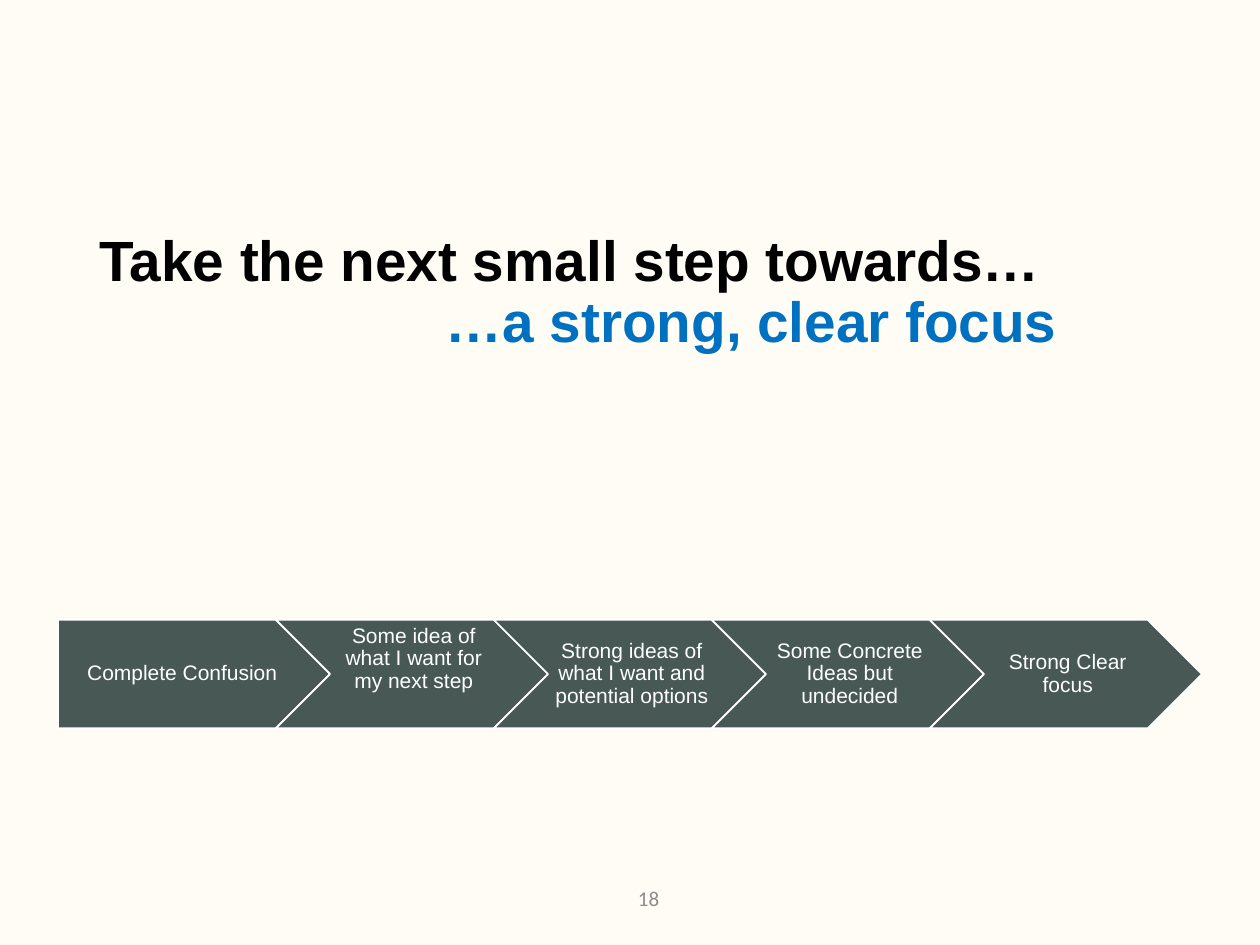
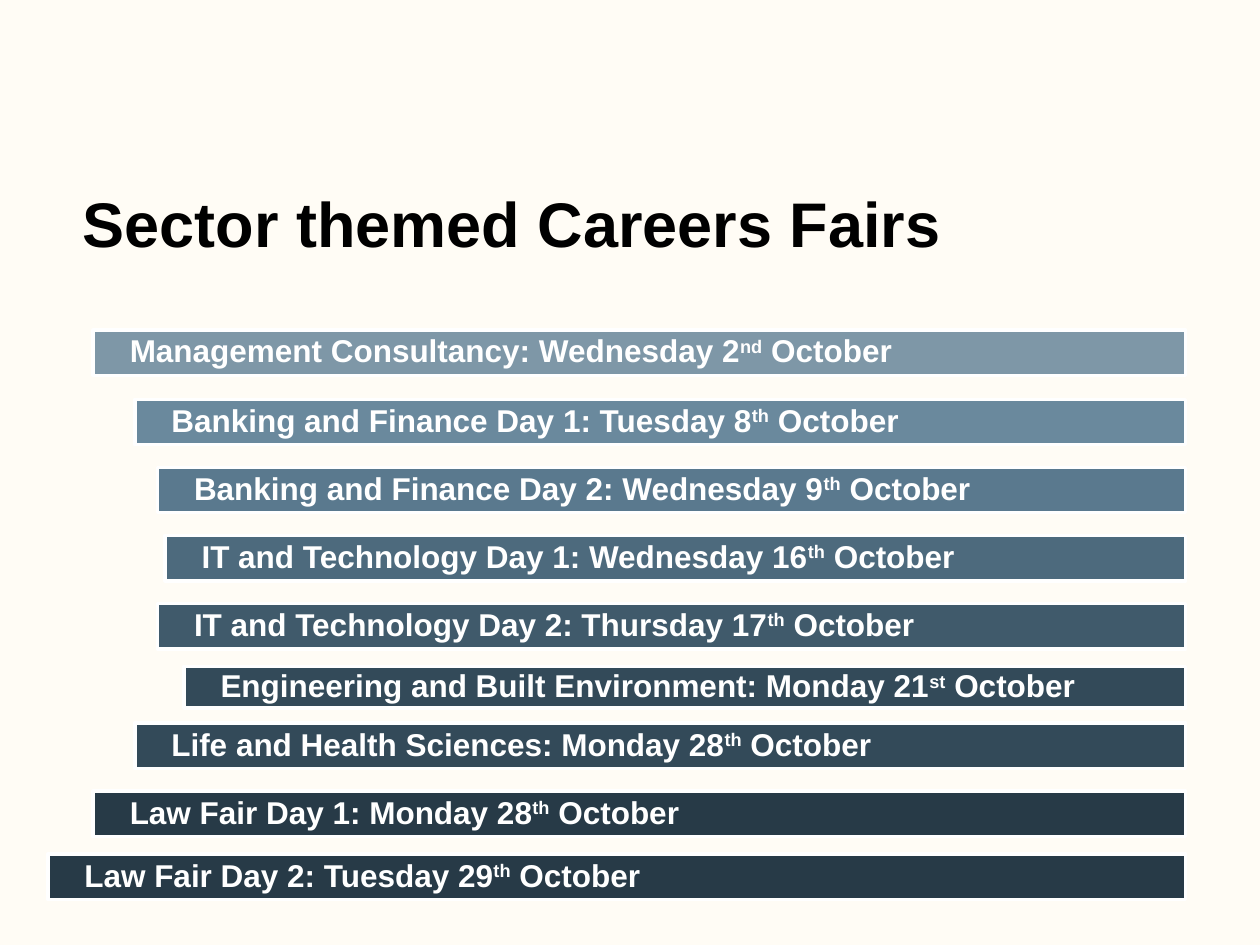
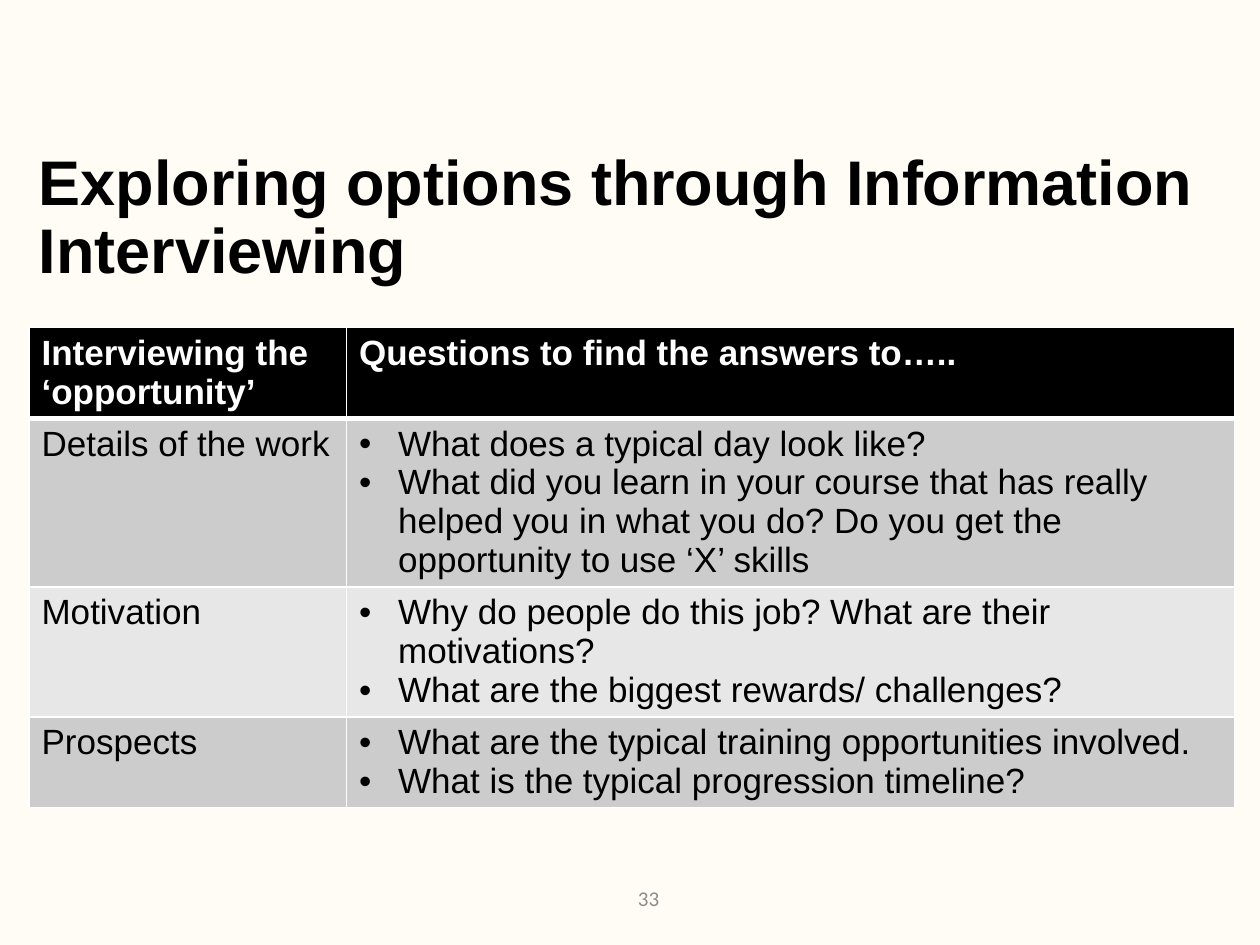
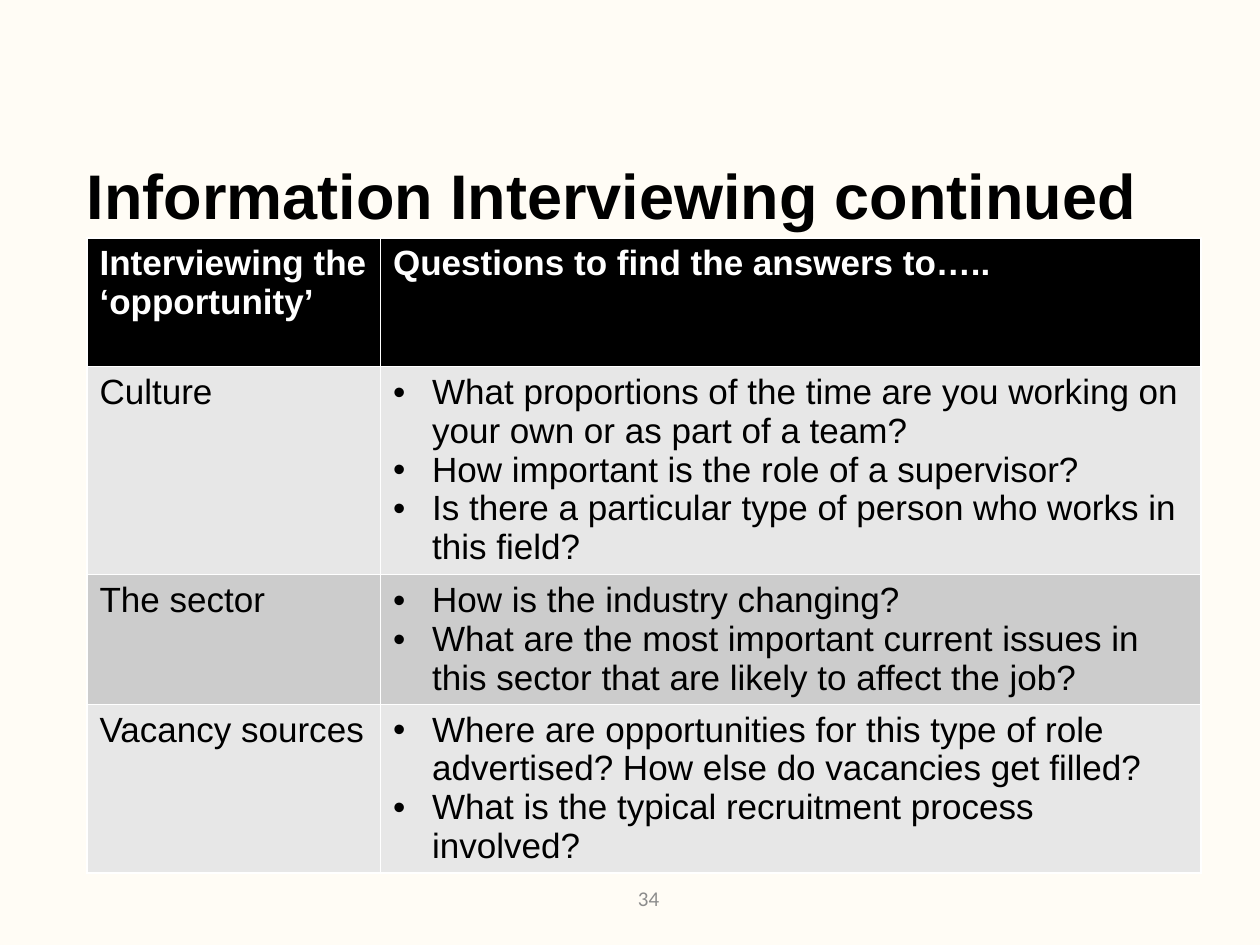
from dataclasses import dataclass

from lxml import etree
from pptx import Presentation
from pptx.dml.color import RGBColor
from pptx.enum import shapes, text
from pptx.oxml import ns
from pptx.util import Inches, Pt


@dataclass(frozen=True)
class Theme:
    font: str = "Arial"
    number_font: str = "Calibri"
    background: str = "FFFCF5"
    ink: str = "000000"
    white: str = "FFFFFF"
    accent: str = "0070C0"
    number: str = "8C8C8C"
    step: str = "475855"
    band_dark: str = "CCCCCC"
    band_light: str = "E7E7E7"
    title_size: float = 36
    focus_size: float = 32.4
    table_size: float = 20
    table_line: float = 22.2
    bar_size: float = 18
    small_size: float = 12


@dataclass(frozen=True)
class Box:
    left: float
    top: float
    width: float
    height: float

    def lengths(self) -> tuple:
        return tuple(Inches(v) for v in (self.left, self.top, self.width, self.height))


@dataclass(frozen=True)
class Style:
    size: float
    color: str
    bold: bool = False
    font: str = "Arial"


@dataclass(frozen=True)
class Step:
    label: str
    anchor: text.MSO_ANCHOR = text.MSO_ANCHOR.MIDDLE


@dataclass(frozen=True)
class Fair:
    name: str
    ordinal: str
    left: float
    top: float
    color: str
    height: float = 0.36


@dataclass(frozen=True)
class Topic:
    name: str
    questions: tuple
    height: float
    color: str


@dataclass(frozen=True)
class QuestionTable:
    left: float
    top: float
    columns: tuple
    header_height: float
    header_rule: float
    topics: tuple


THEME = Theme()
TITLE = Style(THEME.title_size, THEME.ink, True)
FOCUS_TITLE = Style(THEME.focus_size, THEME.ink, True)
FOCUS_ACCENT = Style(THEME.focus_size, THEME.accent, True)
STEP_TEXT = Style(THEME.small_size, THEME.white)
BAR_TEXT = Style(THEME.bar_size, THEME.white, True)
TABLE_HEAD = Style(THEME.table_size, THEME.white, True)
TABLE_TEXT = Style(THEME.table_size, THEME.ink)
NUMBER = Style(THEME.small_size, THEME.number, font=THEME.number_font)

NUMBER_BOX = Box(4.67, 6.93, 0.66, 0.4)
STEP_BOX = Box(0.46, 4.92, 2.16, 0.86)
STEP_PITCH = 1.73
BARS_RIGHT = 9.41
TABLE_HEADINGS = ("Interviewing the ‘opportunity’", "Questions to find the answers to…..")

STEPS = (
    Step("Complete Confusion"),
    Step("Some idea of what I want for my next step", text.MSO_ANCHOR.TOP),
    Step("Strong ideas of what I want and potential options"),
    Step("Some Concrete Ideas but undecided"),
    Step("Strong Clear focus"),
)

FAIRS = (
    Fair("Management Consultancy: Wednesday 2", "nd", 0.74, 2.62, "7E97A7"),
    Fair("Banking and Finance Day 1: Tuesday 8", "th", 1.07, 3.17, "6A899D"),
    Fair("Banking and Finance Day 2: Wednesday 9", "th", 1.25, 3.71, "5A798E"),
    Fair("IT and Technology Day 1: Wednesday 16", "th", 1.31, 4.25, "4D6A7D"),
    Fair("IT and Technology Day 2: Thursday 17", "th", 1.25, 4.79, "405A6B"),
    Fair("Engineering and Built Environment: Monday 21", "st", 1.46, 5.29, "334A59", 0.33),
    Fair("Life and Health Sciences: Monday 28", "th", 1.07, 5.74, "334A59"),
    Fair("Law Fair Day 1: Monday 28", "th", 0.74, 6.28, "273A47"),
    Fair("Law Fair Day 2: Tuesday 29", "th", 0.38, 6.78, "273A47"),
)

JOB_TABLE = QuestionTable(0.23, 2.6, (2.52, 7.05), 0.72, 3, (
    Topic("Details of the work", (
        "What does a typical day look like?",
        "What did you learn in your course that has really helped you in what you do? "
        "Do you get the opportunity to use ‘X’ skills",
    ), 1.34, THEME.band_dark),
    Topic("Motivation", (
        "Why do people do this job? What are their motivations?",
        "What are the biggest rewards/ challenges?",
    ), 1.03, THEME.band_light),
    Topic("Prospects", (
        "What are the typical training opportunities involved.",
        "What is the typical progression timeline?",
    ), 0.72, THEME.band_dark),
))

SECTOR_TABLE = QuestionTable(0.69, 1.89, (2.33, 6.51), 1.02, 1, (
    Topic("Culture", (
        "What proportions of the time are you working on your own or as part of a team?",
        "How important is the role of a supervisor?",
        "Is there a particular type of person who works in this field?",
    ), 1.65, THEME.band_light),
    Topic("The sector", (
        "How is the industry changing?",
        "What are the most important current issues in this sector "
        "that are likely to affect the job?",
    ), 1.03, THEME.band_dark),
    Topic("Vacancy sources", (
        "Where are opportunities for this type of role advertised? "
        "How else do vacancies get filled?",
        "What is the typical recruitment process involved?",
    ), 1.34, THEME.band_light),
))


def rgb(color: str) -> RGBColor:
    return RGBColor.from_string(color)


def add_run(paragraph, words: str, style: Style, superscript: bool = False) -> None:
    run = paragraph.add_run()
    run.text = words
    run.font.name = style.font
    run.font.size = Pt(style.size)
    run.font.bold = style.bold
    run.font.color.rgb = rgb(style.color)
    if superscript:
        run._r.get_or_add_rPr().set("baseline", "30000")


def indent(paragraph, left: float, first: float = 0) -> None:
    properties = paragraph._p.get_or_add_pPr()
    properties.set("marL", str(Inches(left)))
    properties.set("indent", str(Inches(first)))


def add_bullet(paragraph) -> None:
    indent(paragraph, 0.31, -0.31)
    properties = paragraph._p.get_or_add_pPr()
    etree.SubElement(properties, ns.qn("a:buFont"), typeface=THEME.font)
    etree.SubElement(properties, ns.qn("a:buChar"), char="•")


def add_text_box(slide, box: Box):
    """Return the text frame of a wrapping, vertically centred box."""
    frame = slide.shapes.add_textbox(*box.lengths()).text_frame
    frame.word_wrap = True
    frame.vertical_anchor = text.MSO_ANCHOR.MIDDLE
    return frame


def add_title(slide, words: str, box: Box, style: Style = TITLE):
    frame = add_text_box(slide, box)
    paragraph = frame.paragraphs[0]
    paragraph.line_spacing = 0.9
    add_run(paragraph, words, style)
    return frame


def add_number(slide, number: int) -> None:
    paragraph = add_text_box(slide, NUMBER_BOX).paragraphs[0]
    paragraph.alignment = text.PP_ALIGN.RIGHT
    add_run(paragraph, str(number), NUMBER)


def add_filled_shape(slide, kind: shapes.MSO_SHAPE, box: Box, color: str, line: float,
                     insets: tuple, alignment: text.PP_ALIGN):
    """Draw a white-edged shape and return its text frame."""
    shape = slide.shapes.add_shape(kind, *box.lengths())
    shape.shadow.inherit = False
    shape.fill.solid()
    shape.fill.fore_color.rgb = rgb(color)
    shape.line.color.rgb = rgb(THEME.white)
    shape.line.width = Pt(line)
    frame = shape.text_frame
    frame.word_wrap = True
    frame.vertical_anchor = text.MSO_ANCHOR.MIDDLE
    (frame.margin_left, frame.margin_top,
     frame.margin_right, frame.margin_bottom) = (Inches(v) for v in insets)
    frame.paragraphs[0].alignment = alignment
    frame.paragraphs[0].line_spacing = 0.9
    return frame


def add_steps(slide) -> None:
    for index, step in enumerate(STEPS):
        kind = shapes.MSO_SHAPE.CHEVRON if index else shapes.MSO_SHAPE.PENTAGON
        box = Box(STEP_BOX.left + index * STEP_PITCH, STEP_BOX.top,
                  STEP_BOX.width, STEP_BOX.height)
        frame = add_filled_shape(slide, kind, box, THEME.step, 1,
                                 (0.05, 0.04, 0.02, 0.04), text.PP_ALIGN.CENTER)
        frame.vertical_anchor = step.anchor
        add_run(frame.paragraphs[0], step.label, STEP_TEXT)


def add_fair(slide, fair: Fair) -> None:
    box = Box(fair.left, fair.top, BARS_RIGHT - fair.left, fair.height)
    frame = add_filled_shape(slide, shapes.MSO_SHAPE.RECTANGLE, box, fair.color, 2,
                             (0.29, 0.05, 0.05, 0.05), text.PP_ALIGN.LEFT)
    paragraph = frame.paragraphs[0]
    add_run(paragraph, fair.name, BAR_TEXT)
    add_run(paragraph, fair.ordinal, BAR_TEXT, superscript=True)
    add_run(paragraph, " October", BAR_TEXT)


def format_cell(cell, color: str, top: float, bottom: float) -> None:
    """Give a cell white borders of the given widths and a plain fill."""
    properties = cell._tc.get_or_add_tcPr()
    for side, width in (("L", 1), ("R", 1), ("T", top), ("B", bottom)):
        line = etree.SubElement(properties, ns.qn(f"a:ln{side}"), w=str(Pt(width)))
        fill = etree.SubElement(line, ns.qn("a:solidFill"))
        etree.SubElement(fill, ns.qn("a:srgbClr"), val=THEME.white)
    cell.fill.solid()
    cell.fill.fore_color.rgb = rgb(color)


def add_cell_text(cell, lines: tuple, style: Style, bulleted: bool = False) -> None:
    """Write one paragraph a line, at the fixed pitch that the row heights allow for."""
    frame = cell.text_frame
    for index, line in enumerate(lines):
        paragraph = frame.add_paragraph() if index else frame.paragraphs[0]
        if bulleted:
            add_bullet(paragraph)
        paragraph.line_spacing = Pt(THEME.table_line)
        add_run(paragraph, line, style)


def add_question_table(slide, content: QuestionTable) -> None:
    heights = [content.header_height] + [topic.height for topic in content.topics]
    box = Box(content.left, content.top, sum(content.columns), sum(heights))
    table = slide.shapes.add_table(len(heights), len(content.columns), *box.lengths()).table
    table.horz_banding = False
    for column, width in zip(table.columns, content.columns):
        column.width = Inches(width)
    for row, height in zip(table.rows, heights):
        row.height = Inches(height)

    for column, heading in enumerate(TABLE_HEADINGS):
        cell = table.cell(0, column)
        format_cell(cell, THEME.ink, 1, content.header_rule)
        add_cell_text(cell, (heading,), TABLE_HEAD)

    for row, topic in enumerate(content.topics, start=1):
        name_cell, question_cell = table.cell(row, 0), table.cell(row, 1)
        for cell in (name_cell, question_cell):
            format_cell(cell, topic.color, content.header_rule if row == 1 else 1, 1)
        add_cell_text(name_cell, (topic.name,), TABLE_TEXT)
        add_cell_text(question_cell, topic.questions, TABLE_TEXT, bulleted=True)


def build_focus_slide(slide) -> None:
    frame = add_title(slide, "Take the next small step towards…",
                      Box(0.69, 1.74, 8.62, 1.18), FOCUS_TITLE)
    goal = frame.add_paragraph()
    goal.line_spacing = 0.9
    indent(goal, 2.75)
    add_run(goal, "…a strong, clear focus", FOCUS_ACCENT)
    add_steps(slide)
    add_number(slide, 18)


def build_fairs_slide(slide) -> None:
    add_title(slide, "Sector themed Careers Fairs", Box(0.56, 1.21, 9.44, 1.18))
    for fair in FAIRS:
        add_fair(slide, fair)


def build_job_slide(slide) -> None:
    add_number(slide, 33)
    add_title(slide, "Exploring options through Information Interviewing",
              Box(0.21, 1.15, 9.48, 1.18))
    add_question_table(slide, JOB_TABLE)


def build_sector_slide(slide) -> None:
    add_number(slide, 34)
    add_title(slide, "Information Interviewing continued", Box(0.59, 0.99, 8.62, 1.18))
    add_question_table(slide, SECTOR_TABLE)


def main() -> None:
    presentation = Presentation()
    presentation.slide_width, presentation.slide_height = Inches(10), Inches(7.5)
    background = presentation.slide_master.background.fill
    background.solid()
    background.fore_color.rgb = rgb(THEME.background)
    blank = presentation.slide_layouts[6]
    for build in (build_focus_slide, build_fairs_slide, build_job_slide, build_sector_slide):
        build(presentation.slides.add_slide(blank))
    presentation.save("out.pptx")


if __name__ == "__main__":
    main()
